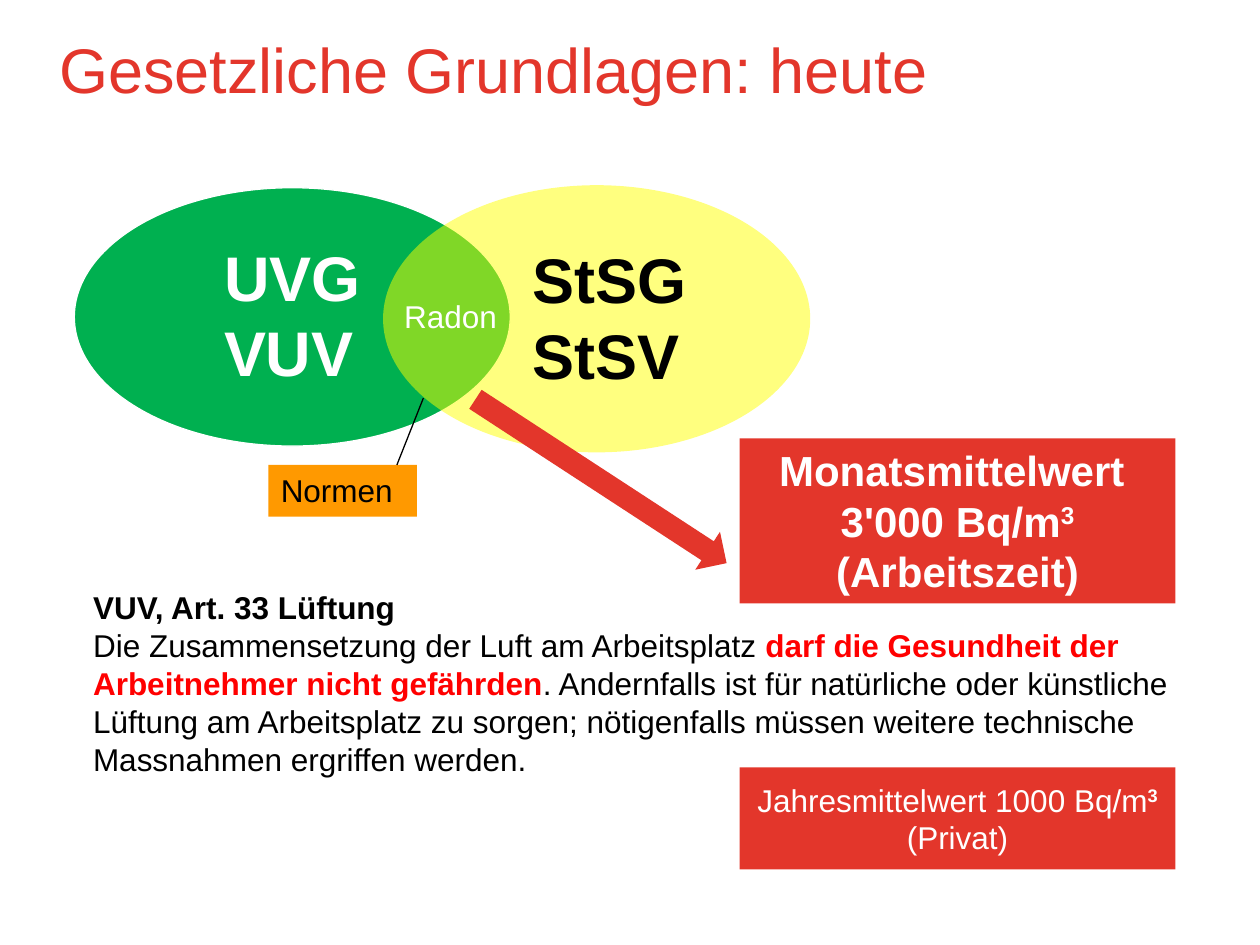
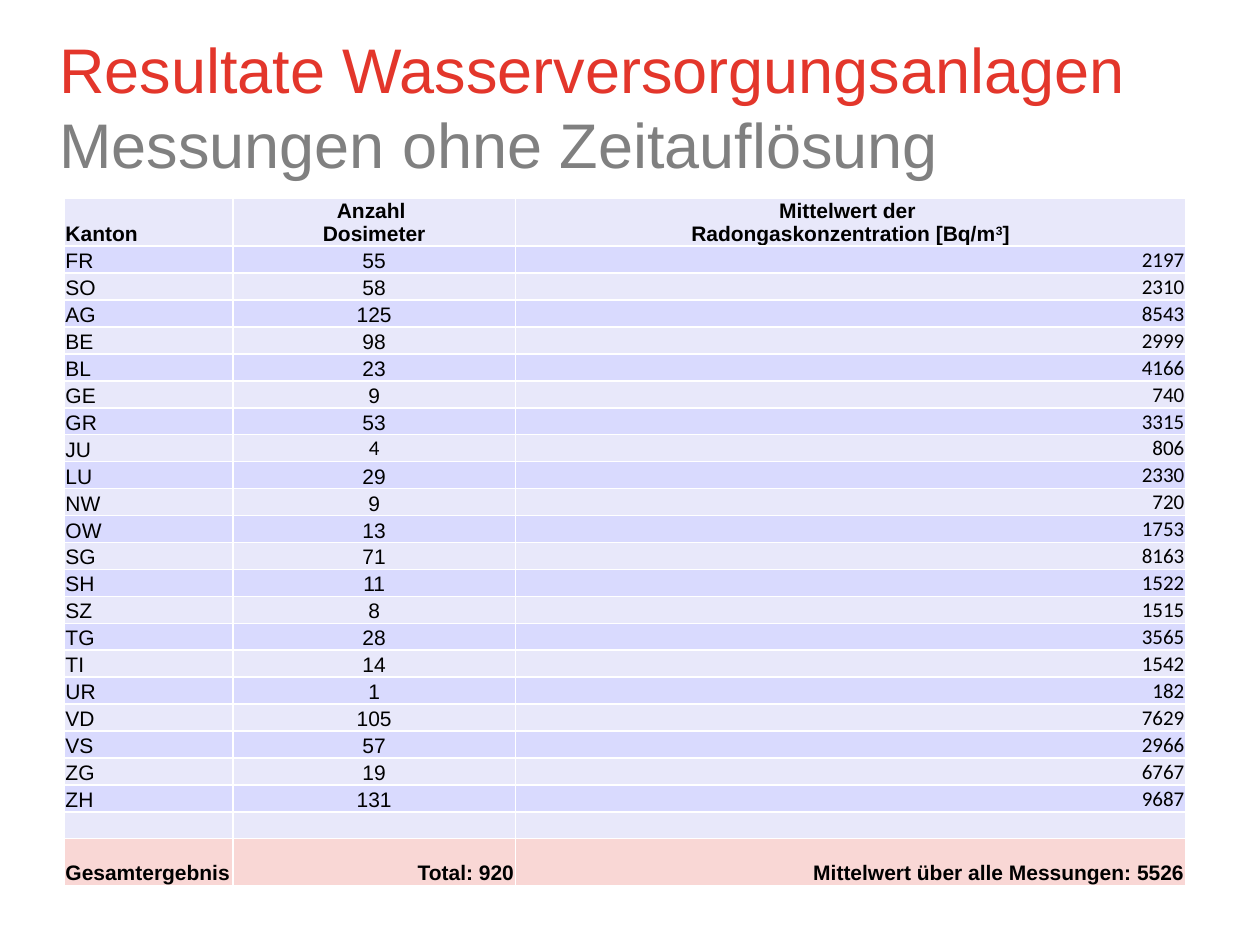
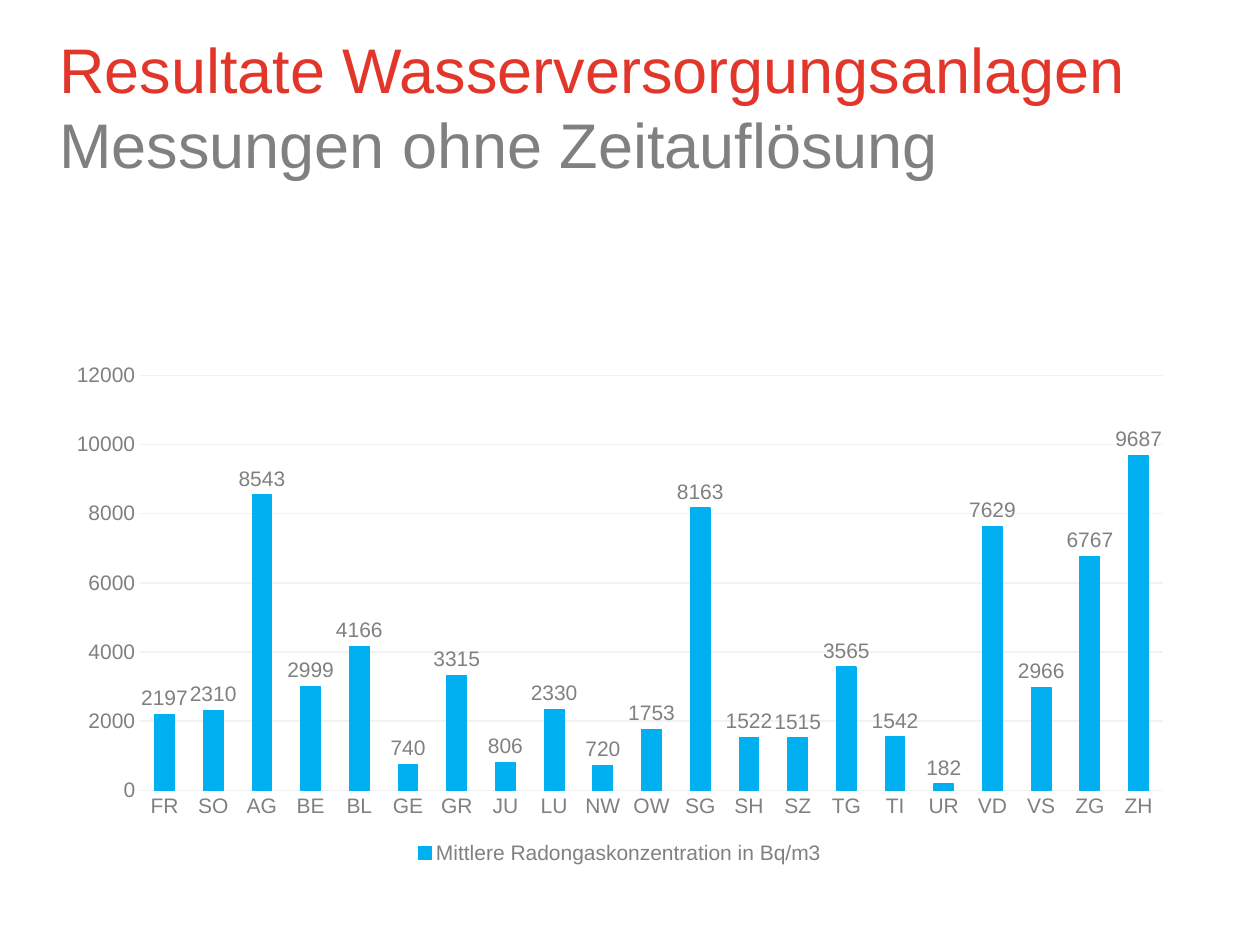
import pptx
import pptx.chart.data
import pptx.dml.color
import pptx.enum.chart
import pptx.enum.shapes
import pptx.enum.text
import pptx.oxml
import pptx.oxml.ns
import pptx.util

RGBColor = pptx.dml.color.RGBColor
Pt = pptx.util.Pt
SHAPES = pptx.enum.shapes.MSO_SHAPE
ALIGN = pptx.enum.text.PP_ALIGN
ANCHOR = pptx.enum.text.MSO_ANCHOR
FIT = pptx.enum.text.MSO_AUTO_SIZE

RED = RGBColor(0xE3, 0x36, 0x2B)
ALERT = RGBColor(0xFF, 0x00, 0x00)
GREEN = RGBColor(0x00, 0xB0, 0x50)
YELLOW = RGBColor(0xFF, 0xFF, 0x00)
ORANGE = RGBColor(0xFF, 0x99, 0x00)
BLUE = RGBColor(0x00, 0xB0, 0xF0)
GREY = RGBColor(0x80, 0x80, 0x80)
GRID_GREY = RGBColor(0xF2, 0xF2, 0xF2)
WHITE = RGBColor(0xFF, 0xFF, 0xFF)
BLACK = RGBColor(0x00, 0x00, 0x00)
BAND_LIGHT = RGBColor(0xE8, 0xE8, 0xFA)
BAND_DARK = RGBColor(0xD9, 0xDA, 0xFE)
TOTAL_FILL = RGBColor(0xF9, 0xD7, 0xD5)

WIDTH, HEIGHT = pptx.util.Inches(10), pptx.util.Inches(7.5)
COLUMN, ROW = WIDTH / 100, HEIGHT / 75

BOLD, PLAIN = {"bold": True}, {}
RAISED = {"bold": True, "raised": True}
TITLE_AREA = (4.3, 1.6, 92.1, 13.9)
LAW_TITLE = [("Gesetzliche Grundlagen: heute", {"color": RED})]
RESULT_TITLE = [("Resultate Wasserversorgungsanlagen\n", {"color": RED}),
                ("Messungen ohne Zeitauflösung", {"color": GREY})]

LAW_AREA, LAW_TEXT = (16.8, 18.4, 16.6, 13), [[("UVG\nVUV", BOLD)]]
RAY_AREA, RAY_TEXT = (41.3, 18.6, 17.7, 13), [[("StSG\nStSV", BOLD)]]
RADON_AREA, RADON_TEXT = (31.1, 23.1, 10.2, 4), [[("Radon", PLAIN)]]
NORM_AREA, NORM_TEXT = (21.3, 36.9, 11.8, 4.1), [[("Normen", PLAIN)]]
WORK_AREA = (58.7, 34.8, 34.6, 13.1)
WORK_TEXT = [[("Monatsmittelwert ", BOLD)],
             [("3'000 Bq/m", BOLD), ("3", RAISED)],
             [("(Arbeitszeit)", BOLD)]]
HOME_AREA = (58.7, 60.9, 34.6, 8.1)
HOME_TEXT = [[("Jahresmittelwert 1000 Bq/m", PLAIN), ("3 ", RAISED), ("(Privat)", PLAIN)]]
ARTICLE_AREA = (6.4, 46.2, 87.9, 16.2)
ARTICLE_TEXT = [
    [("VUV, Art. 33 Lüftung", BOLD)],
    [("Die Zusammensetzung der Luft am Arbeitsplatz ", PLAIN),
     ("darf die Gesundheit der Arbeitnehmer nicht gefährden", {"bold": True, "color": ALERT}),
     (". Andernfalls ist für natürliche oder künstliche Lüftung am Arbeitsplatz zu sorgen; "
      "nötigenfalls müssen weitere technische Massnahmen ergriffen werden.", PLAIN)],
]

TABLE_AREA = (5.1, 15.7, 89, 54.1)
TABLE_COLUMNS = (13.4, 22.4, 53.2)
BODY_ROW, TOTAL_ROW = 2.14, 3.7
CANTONS = [
    ("FR", 55, 2197), ("SO", 58, 2310), ("AG", 125, 8543), ("BE", 98, 2999),
    ("BL", 23, 4166), ("GE", 9, 740), ("GR", 53, 3315), ("JU", 4, 806),
    ("LU", 29, 2330), ("NW", 9, 720), ("OW", 13, 1753), ("SG", 71, 8163),
    ("SH", 11, 1522), ("SZ", 8, 1515), ("TG", 28, 3565), ("TI", 14, 1542),
    ("UR", 1, 182), ("VD", 105, 7629), ("VS", 57, 2966), ("ZG", 19, 6767),
    ("ZH", 131, 9687),
]
CALIBRI_COUNTS = {"JU"}
TABLE_HEAD = [
    [[("Kanton", BOLD)]],
    [[("Anzahl ", BOLD)], [("Dosimeter", BOLD)]],
    [[("Mittelwert der ", BOLD)],
     [("Radongaskonzentration [Bq/m", BOLD), ("3", RAISED), ("]", BOLD)]],
]
TABLE_TOTAL = [[[(text, BOLD)]] for text in
               ("Gesamtergebnis", "Total: 920", "Mittelwert über alle Messungen: 5526")]

CHART_AREA = (4.3, 28.1, 89.8, 40.9)
SERIES_NAME = "Mittlere Radongaskonzentration in Bq/m3"


def place(area):
    left, top, width, height = area
    return [round(v) for v in (left * COLUMN, top * ROW, width * COLUMN, height * ROW)]


def set_all(target, values):
    for name, value in values.items():
        setattr(target, name, value)


def style_font(font, size, color, bold=False, name="Arial"):
    set_all(font, {"size": Pt(size), "bold": bold, "name": name})
    font.color.rgb = color


def write(frame, paragraphs, size, color=BLACK, align=ALIGN.LEFT, name="Arial"):
    for index, spans in enumerate(paragraphs):
        para = frame.paragraphs[0] if index == 0 else frame.add_paragraph()
        para.alignment = align
        for text, look in spans:
            for number, line in enumerate(text.split("\n")):
                if number:
                    para.add_line_break()
                if not line:
                    continue
                span = para.add_run()
                span.text = line
                style_font(span.font, size, look.get("color", color), look.get("bold", False), name)
                if look.get("raised"):
                    span.font._element.set("baseline", "30000")


def add_text(page, area, paragraphs, size, color=BLACK, align=ALIGN.LEFT, fill=None, **frame_values):
    if fill is None:
        box = page.shapes.add_textbox(*place(area))
    else:
        box = add_filled(page, SHAPES.RECTANGLE, area, fill)
    set_all(box.text_frame, {"word_wrap": True, "vertical_anchor": ANCHOR.TOP,
                             "auto_size": FIT.SHAPE_TO_FIT_TEXT, **frame_values})
    write(box.text_frame, paragraphs, size, color, align)
    return box


def add_filled(page, kind, area, fill):
    shape = page.shapes.add_shape(kind, *place(area))
    shape.shadow.inherit = False
    shape.fill.solid()
    shape.fill.fore_color.rgb = fill
    shape.line.fill.background()
    return shape


def add_page(deck, title):
    page = deck.slides.add_slide(deck.slide_layouts[6])
    add_text(page, TITLE_AREA, [title], 36, auto_size=FIT.NONE,
             margin_left=round(0.4 * COLUMN), margin_top=round(0.8 * ROW),
             margin_right=0, margin_bottom=0)
    return page


def build_law(deck):
    page = add_page(deck, LAW_TITLE)
    law = add_filled(page, SHAPES.OVAL, (5.9, 14.9, 34.6, 20.5), GREEN)
    law.line.color.rgb = WHITE
    law.line.width = Pt(0.75)
    add_text(page, LAW_AREA, LAW_TEXT, 36, WHITE, fill=GREEN)
    ray = add_filled(page, SHAPES.OVAL, (30.4, 14.7, 33.9, 21.2), YELLOW)
    tint = ray.fill._xPr.find(".//" + pptx.oxml.ns.qn("a:srgbClr"))
    tint.append(pptx.oxml.parse_xml(
        f'<a:alpha {pptx.oxml.ns.nsdecls("a")} val="50000"/>'))
    add_text(page, RAY_AREA, RAY_TEXT, 36)
    add_text(page, RADON_AREA, RADON_TEXT, 18, WHITE)
    add_text(page, NORM_AREA, NORM_TEXT, 18, fill=ORANGE)

    start_x, start_y, end_x, end_y = place((31.5, 36.9, 33.6, 31.6))
    pointer = page.shapes.add_connector(
        pptx.enum.shapes.MSO_CONNECTOR.STRAIGHT, start_x, start_y, end_x, end_y)
    pointer.line.color.rgb = BLACK
    pointer.line.width = Pt(0.75)
    pointer._element.spPr.append(pptx.oxml.parse_xml(
        f'<a:effectLst {pptx.oxml.ns.nsdecls("a")}/>'))

    add_text(page, WORK_AREA, WORK_TEXT, 24, WHITE, ALIGN.CENTER, RED)
    arrow = add_filled(page, SHAPES.RIGHT_ARROW, (35.8, 36.4, 23.8, 3.6), RED)
    arrow.rotation = 33.1
    add_text(page, ARTICLE_AREA, ARTICLE_TEXT, 18)
    add_text(page, HOME_AREA, HOME_TEXT, 18, WHITE, ALIGN.CENTER, RED,
             vertical_anchor=ANCHOR.MIDDLE, auto_size=FIT.NONE)


def fill_cell(cell, paragraphs, fill, align, name="Arial"):
    margin = round(0.1 * COLUMN)
    set_all(cell, {"margin_left": margin, "margin_right": margin, "margin_top": margin,
                   "margin_bottom": 0, "vertical_anchor": ANCHOR.BOTTOM})
    properties = cell._tc.get_or_add_tcPr()
    for side in ("lnL", "lnR", "lnT", "lnB"):
        properties.append(pptx.oxml.parse_xml(
            f'<a:{side} {pptx.oxml.ns.nsdecls("a")} w="12700"><a:solidFill>'
            f'<a:srgbClr val="{WHITE}"/></a:solidFill></a:{side}>'))
    cell.fill.solid()
    cell.fill.fore_color.rgb = fill
    write(cell.text_frame, paragraphs, 12, align=align, name=name)
    if not paragraphs:
        cell.text_frame.paragraphs[0]._p.append(pptx.oxml.parse_xml(
            f'<a:endParaRPr {pptx.oxml.ns.nsdecls("a")} sz="1200"/>'))


def build_table(deck):
    page = add_page(deck, RESULT_TITLE)
    body = [[[[(str(value), PLAIN)]] for value in canton] for canton in CANTONS]
    rows = [TABLE_HEAD, *body, [[], [], []], TABLE_TOTAL]
    last = len(rows) - 1
    table = page.shapes.add_table(len(rows), len(TABLE_COLUMNS), *place(TABLE_AREA)).table
    set_all(table, {"first_row": False, "horz_banding": False})
    for column, width in zip(table.columns, TABLE_COLUMNS):
        column.width = round(width * COLUMN)
    head_row = TABLE_AREA[3] - TOTAL_ROW - (last - 1) * BODY_ROW
    for index, row in enumerate(rows):
        height = {0: head_row, last: TOTAL_ROW}.get(index, BODY_ROW)
        table.rows[index].height = round(height * ROW)
        fill = TOTAL_FILL if index == last else (BAND_LIGHT, BAND_DARK)[index % 2]
        aligns = [ALIGN.LEFT, ALIGN.CENTER, ALIGN.CENTER if index == 0 else ALIGN.RIGHT]
        if index == last:
            aligns[1] = ALIGN.RIGHT
        names = ["Arial"] * 3
        if 0 < index <= len(CANTONS):
            names[2] = "Calibri"
            if CANTONS[index - 1][0] in CALIBRI_COUNTS:
                names[1] = "Calibri"
        for position, paragraphs in enumerate(row):
            fill_cell(table.cell(index, position), paragraphs, fill,
                      aligns[position], names[position])


def build_chart(deck):
    page = add_page(deck, RESULT_TITLE)
    data = pptx.chart.data.CategoryChartData(number_format="0")
    data.categories = [canton for canton, count, mean in CANTONS]
    data.add_series(SERIES_NAME, [mean for canton, count, mean in CANTONS])
    chart = page.shapes.add_chart(
        pptx.enum.chart.XL_CHART_TYPE.COLUMN_CLUSTERED, *place(CHART_AREA), data).chart
    set_all(chart, {"has_title": False, "has_legend": True})
    style_font(chart.font, 10, BLACK)
    set_all(chart.legend, {"position": pptx.enum.chart.XL_LEGEND_POSITION.BOTTOM,
                           "include_in_layout": False})
    style_font(chart.legend.font, 12, GREY)
    for axis in (chart.category_axis, chart.value_axis):
        set_all(axis, {"major_tick_mark": pptx.enum.chart.XL_TICK_MARK.NONE,
                       "minor_tick_mark": pptx.enum.chart.XL_TICK_MARK.NONE})
        axis.format.line.fill.background()
        style_font(axis.tick_labels.font, 12, GREY)
    set_all(chart.value_axis.tick_labels, {"number_format": "0", "number_format_is_linked": False})
    grid = chart.value_axis.major_gridlines.format.line
    grid.color.rgb = GRID_GREY
    grid.width = Pt(0.75)
    plot = chart.plots[0]
    set_all(plot, {"gap_width": 150, "vary_by_categories": False, "has_data_labels": True})
    set_all(plot.data_labels, {
        "show_value": True, "number_format": "0", "number_format_is_linked": False,
        "position": pptx.enum.chart.XL_LABEL_POSITION.OUTSIDE_END})
    style_font(plot.data_labels.font, 12, GREY)
    bars = plot.series[0].format
    bars.fill.solid()
    bars.fill.fore_color.rgb = BLUE
    bars.line.color.rgb = BLUE
    bars.line.width = Pt(0.75)


def main():
    deck = pptx.Presentation()
    set_all(deck, {"slide_width": WIDTH, "slide_height": HEIGHT})
    for build in (build_law, build_table, build_chart):
        build(deck)
    deck.save("out.pptx")


if __name__ == "__main__":
    main()
